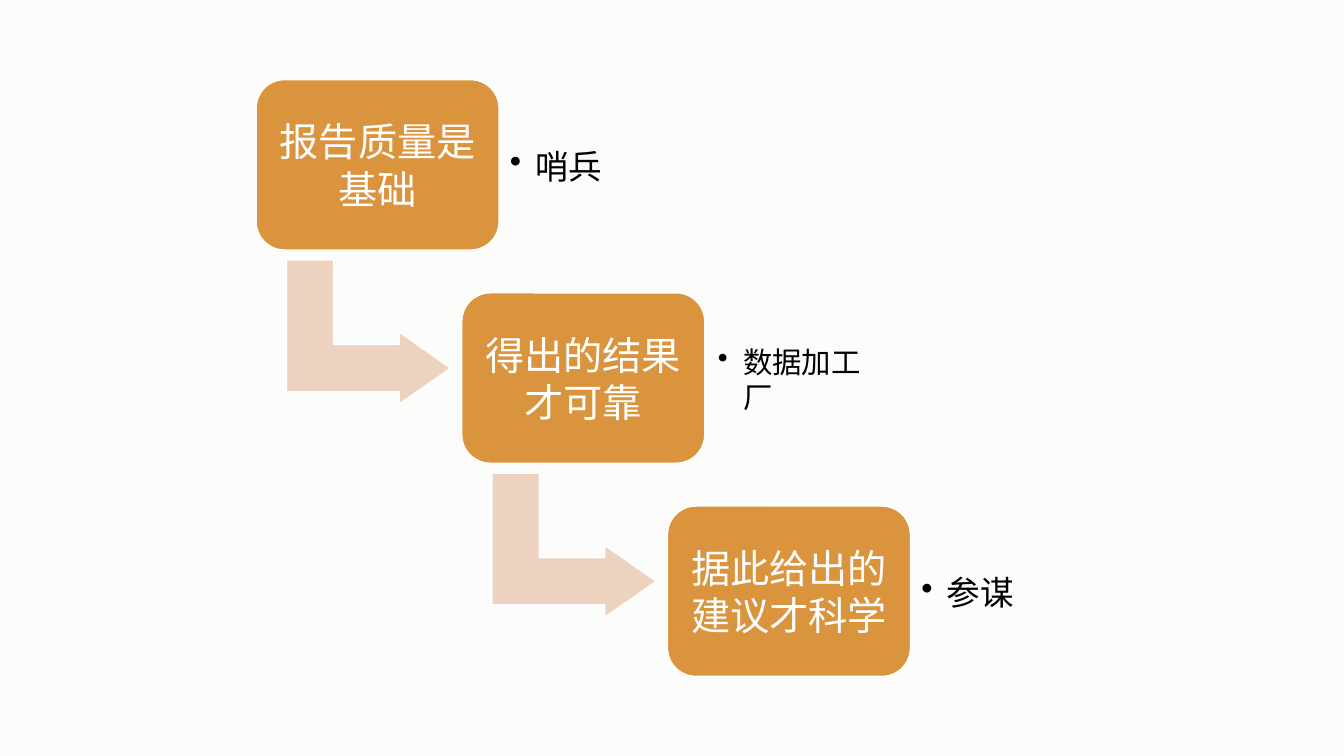
from lxml import etree
from pptx import Presentation
from pptx.dml.color import RGBColor
from pptx.enum.shapes import MSO_SHAPE as Shape
from pptx.enum.text import MSO_ANCHOR as Anchor, PP_ALIGN as Align
from pptx.oxml.ns import qn
from pptx.util import Inches, Pt

COLORS = {
    "background": "FCFCFB",
    "step": "DA943E",
    "arrow": "EDD2C0",
    "white": "FFFFFF",
    "note": "000000",
}
STEPS = [
    ("报告质量是基础", "哨兵", 24, 0.1),
    ("得出的结果才可靠", "数据加工厂", 21, 0.12),
    ("据此给出的建议才科学", "参谋", 24, 0.1),
]
STAIR_LEFT, STAIR_TOP = 2.54, 0.79
STEP_WIDTH, STEP_HEIGHT = 2.41, 1.69
STEP_RIGHT, STEP_DOWN = 2.04, 2.115


def rgb(name):
    return RGBColor.from_string(COLORS[name])


def add_block(slide, kind, box, fill, adjustments):
    shape = slide.shapes.add_shape(kind, *map(Inches, box))
    shape.shadow.inherit = False
    shape.fill.solid()
    shape.fill.fore_color.rgb = rgb(fill)
    shape.line.color.rgb = rgb("white")
    shape.line.width = Pt(1)
    for index, value in enumerate(adjustments):
        shape.adjustments[index] = value
    return shape


def write_text(shape, text, size, color, inset):
    """Fill the shape with one vertically centred paragraph and return it."""
    frame = shape.text_frame
    frame.text = text
    frame.word_wrap = True
    frame.vertical_anchor = Anchor.MIDDLE
    frame.margin_left = frame.margin_right = Inches(inset)
    frame.margin_top = frame.margin_bottom = Inches(inset)
    paragraph = frame.paragraphs[0]
    font = paragraph.runs[0].font
    font.name = "Arial"
    font.size = Pt(size)
    font.color.rgb = rgb(color)
    return paragraph


def add_bullet(paragraph):
    properties = paragraph._p.get_or_add_pPr()
    properties.set("marL", str(Inches(0.25)))
    properties.set("indent", str(Inches(-0.25)))
    etree.SubElement(properties, qn("a:buChar")).set("char", "•")


def add_step(slide, left, top, title):
    box = (left, top, STEP_WIDTH, STEP_HEIGHT)
    step = add_block(slide, Shape.ROUNDED_RECTANGLE, box, "step", [0.167])
    # The rounded corners add their own inset to the text area.
    write_text(step, title, 28, "white", 0.04).alignment = Align.CENTER


def add_note(slide, left, top, text, size, inset):
    box = (left + STEP_WIDTH + 0.01, top + 0.17, 1.76, 1.37)
    note = slide.shapes.add_textbox(*map(Inches, box))
    add_bullet(write_text(note, text, size, "note", inset))


def add_arrow(slide, left, top):
    """Lead from below the step at left, top to the next one."""
    box = (left + 0.4, top + STEP_HEIGHT, 1.43, 1.63)
    arrow = add_block(slide, Shape.BENT_UP_ARROW, box, "arrow", [0.328, 0.25, 0.358])
    arrow.rotation = 90


def add_staircase(slide, left, top):
    for index, (title, note, size, inset) in enumerate(STEPS):
        step_left = left + index * STEP_RIGHT
        step_top = top + index * STEP_DOWN
        if index < len(STEPS) - 1:
            add_arrow(slide, step_left, step_top)
        add_step(slide, step_left, step_top, title)
        add_note(slide, step_left, step_top, note, size, inset)


def main():
    presentation = Presentation()
    presentation.slide_width = Inches(13.33)
    presentation.slide_height = Inches(7.5)
    slide = presentation.slides.add_slide(presentation.slide_layouts[6])
    slide.background.fill.solid()
    slide.background.fill.fore_color.rgb = rgb("background")
    add_staircase(slide, STAIR_LEFT, STAIR_TOP)
    presentation.save("out.pptx")


if __name__ == "__main__":
    main()
